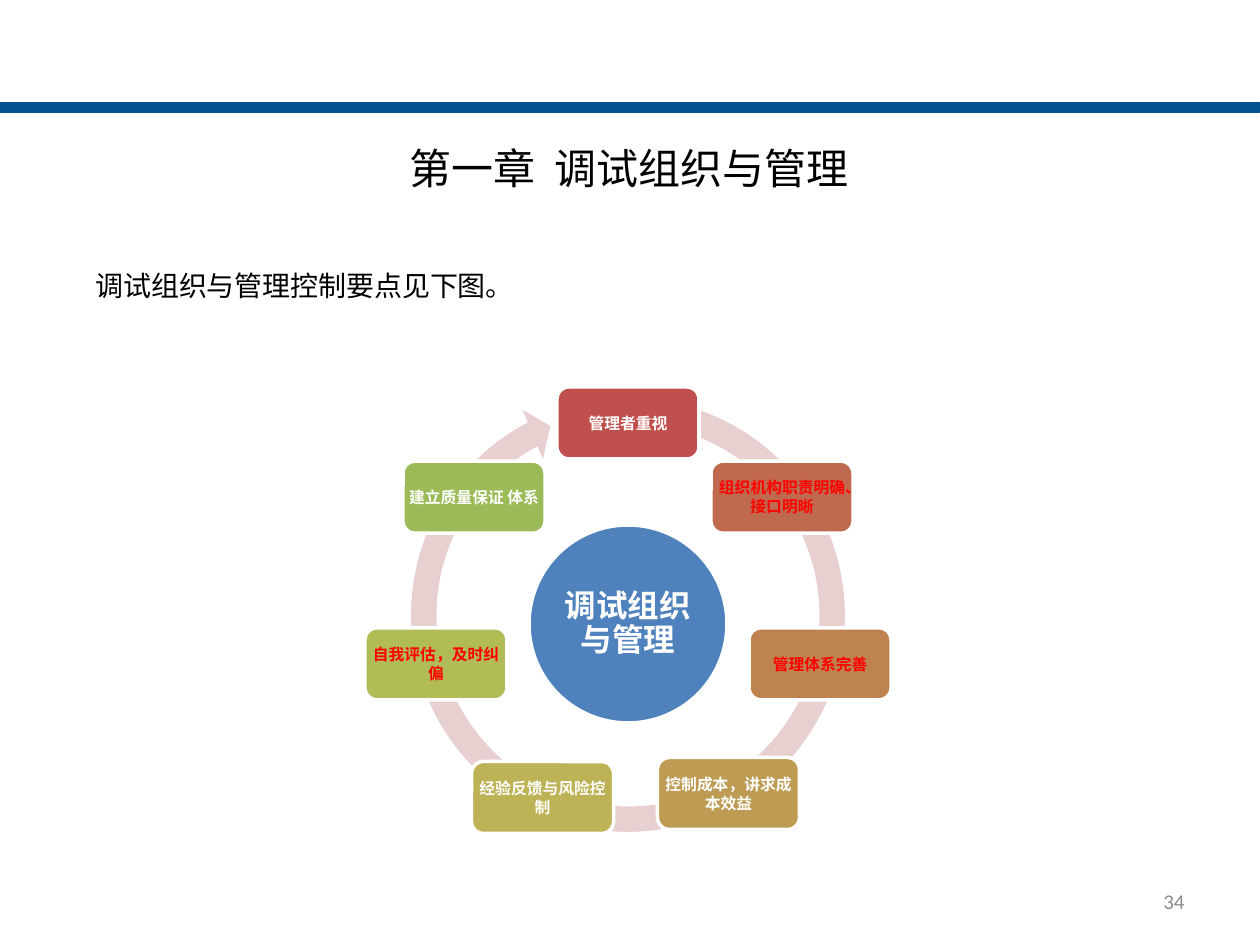
"""Builds the slide on the control points of commissioning management."""
import math

from lxml import etree
from pptx import Presentation, util as u
from pptx.dml.color import RGBColor
from pptx.enum import shapes, text
from pptx.oxml import ns

FONT = "Noto Sans CJK SC"
COLORS = {"bar": "005292", "ink": "000000", "number": "8C8C8C", "white": "FFFFFF",
          "red": "FF0000", "arrow": "E8D0D0", "hub": "4F81BD"}
TITLE = "第一章  调试组织与管理"
INTRO = "调试组织与管理控制要点见下图。"
HUB = "调试组织与管理"
PAGE = "34"
# label, fill, text colour, nudge from the ring in px
STEPS = [
    ("管理者重视", "C0504D", "white", (0, 0)),
    ("组织机构职责明确、接口明晰", "BF6A4F", "red", (0, 0)),
    ("管理体系完善", "BE8351", "red", (0, 0)),
    ("控制成本，讲求成本效益", "BD9B53", "white", (15, -4)),
    ("经验反馈与风险控制", "BDB255", "white", (0, 0)),
    ("自我评估，及时纠偏", "B1BC57", "red", (0, 0)),
    ("建立质量保证 体系", "9BBB59", "white", (0, 0)),
]
ARROW_ADJUSTMENTS = (0.055, 3.307, 145.304, 169.419, 0.058)
RING_X, RING_Y, RADIUS = 628, 620, 197
STEP_W, STEP_H = 142, 72
ALIGN, KIND = text.PP_ALIGN, shapes.MSO_SHAPE


def px(length):
    return u.Emu(round(length * 914400 / 126))


def place(left, top, width, height):
    return [px(length) for length in (left, top, width, height)]


def write(shape, words, size, color="ink", font=FONT, bold=False, align=ALIGN.CENTER,
          spacing=None, indent=0, inset=None, anchor=text.MSO_ANCHOR.MIDDLE):
    frame = shape.text_frame
    frame.word_wrap = True
    frame.auto_size = text.MSO_AUTO_SIZE.NONE
    frame.vertical_anchor = anchor
    if inset is not None:
        frame.margin_left = frame.margin_right = px(inset)
        frame.margin_top = frame.margin_bottom = px(inset)
    paragraph = frame.paragraphs[0]
    paragraph.alignment = align
    if spacing:
        paragraph.line_spacing = spacing
    if indent:
        paragraph._p.get_or_add_pPr().set("indent", str(px(indent)))
    run = paragraph.add_run()
    run.text = words
    run.font.size, run.font.bold, run.font.name = u.Pt(size), bold, font
    run.font.color.rgb = RGBColor.from_string(COLORS[color])
    etree.SubElement(run._r.get_or_add_rPr(), ns.qn("a:ea")).set("typeface", font)


def draw(slide, kind, box, fill, line=None):
    shape = slide.shapes.add_shape(kind, *place(*box))
    shape.shadow.inherit = False
    shape.fill.solid()
    shape.fill.fore_color.rgb = RGBColor.from_string(fill)
    if line:
        shape.line.color.rgb = RGBColor.from_string(line)
        shape.line.width = u.Pt(2)
    else:
        shape.line.fill.background()
    return shape


def main():
    deck = Presentation()
    deck.slide_width, deck.slide_height = px(1260), px(945)
    slide = deck.slides.add_slide(deck.slide_layouts[5])

    draw(slide, KIND.RECTANGLE, (0, 104, 1259, 7), COLORS["bar"], COLORS["bar"])
    title = slide.shapes.title
    title.left, title.top, title.width, title.height = place(62, 136, 1134, 63)
    write(title, TITLE, 24)
    intro = slide.shapes.add_textbox(*place(40, 246, 1194, 63))
    write(intro, INTRO, 16, align=ALIGN.JUSTIFY, spacing=1.5, indent=43,
          anchor=text.MSO_ANCHOR.TOP)
    number = slide.shapes.add_textbox(*place(903, 876, 294, 50))
    write(number, PAGE, 12, "number", font="Calibri", align=ALIGN.RIGHT)

    arrow = draw(slide, KIND.CIRCULAR_ARROW, (397, 384, 462, 462), COLORS["arrow"])
    for index, value in enumerate(ARROW_ADJUSTMENTS):
        arrow.adjustments[index] = value

    for index, (label, fill, color, (dx, dy)) in enumerate(STEPS):
        angle = 2 * math.pi * index / len(STEPS)
        left = RING_X + RADIUS * math.sin(angle) + dx - STEP_W / 2
        top = RING_Y - RADIUS * math.cos(angle) + dy - STEP_H / 2
        step = draw(slide, KIND.ROUNDED_RECTANGLE, (left, top, STEP_W, STEP_H),
                    fill, COLORS["white"])
        write(step, label, 9, color, bold=True, inset=1)

    hub = draw(slide, KIND.OVAL, (529, 525, 198, 198), COLORS["hub"], COLORS["white"])
    write(hub, HUB, 18, "white", bold=True, spacing=0.9, inset=0)
    deck.save("out.pptx")


if __name__ == "__main__":
    main()
